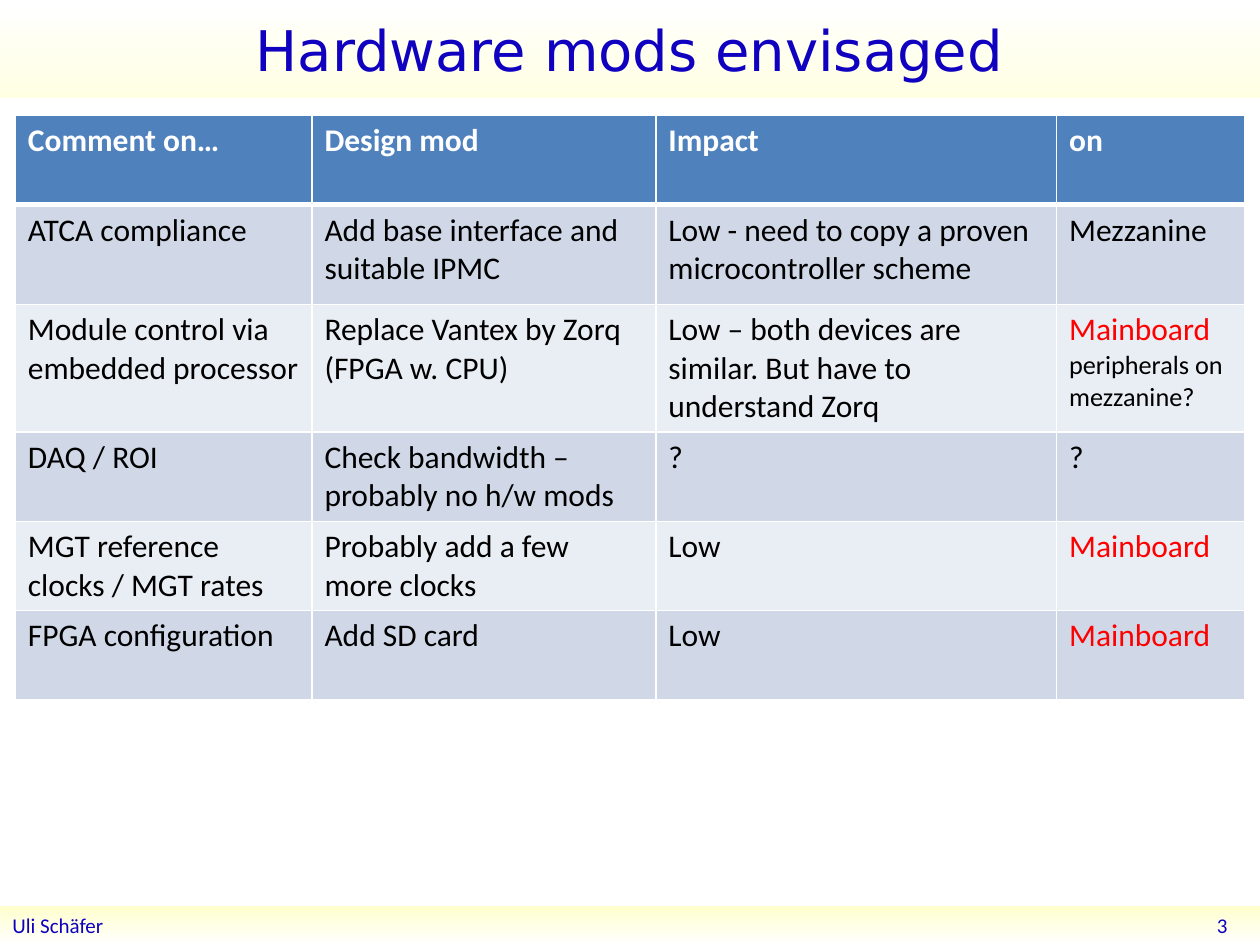
from lxml import etree
from pptx import Presentation
from pptx.dml.color import RGBColor
from pptx.enum.shapes import MSO_SHAPE
from pptx.enum.text import MSO_ANCHOR, PP_ALIGN
from pptx.oxml import parse_xml
from pptx.oxml.ns import nsdecls
from pptx.util import Pt

RECT = MSO_SHAPE.RECTANGLE
MIDDLE = MSO_ANCHOR.MIDDLE
LEFT, CENTER, RIGHT = PP_ALIGN.LEFT, PP_ALIGN.CENTER, PP_ALIGN.RIGHT

NAVY = RGBColor(0x0F, 0x01, 0xBF)
WHITE = RGBColor(0xFF, 0xFF, 0xFF)
BLACK = RGBColor(0, 0, 0)
RED = RGBColor(0xFF, 0, 0)
CREAM = RGBColor(0xFF, 0xFF, 0xE3)
LEMON = RGBColor(0xFF, 0xFF, 0xCC)
BLUE = RGBColor(0x4F, 0x81, 0xBD)
BANDS = [RGBColor(0xE9, 0xED, 0xF4), RGBColor(0xD0, 0xD8, 0xE8)]


def write(para, text, color, size=18, bold=False, name="Calibri"):
    run = para.add_run()
    run.text = text
    run.font.color.rgb = color
    form = {"size": Pt(size), "bold": bold, "name": name}
    for key, value in form.items():
        setattr(run.font, key, value)


def edge(cell, side, width):
    line = parse_xml(f'<a:{side} {nsdecls("a")} w="{Pt(width)}"/>')
    fill = etree.SubElement(line, line.tag.replace(side, "solidFill"))
    etree.SubElement(fill, line.tag.replace(side, "srgbClr"), val=str(WHITE))
    cell._tc.get_or_add_tcPr().append(line)


prs = Presentation()
prs.slide_width, prs.slide_height = Pt(720), Pt(540)
slide = prs.slides.add_slide(prs.slide_layouts[6])
shapes = slide.shapes

# Title and footer bars: top, height, start colour, angle, text format
bars = [
    (0, 56, CREAM, 90, "Hardware mods envisaged", CENTER, 32, "DejaVu Sans"),
    (517.5, 22.5, LEMON, 270, "Uli Schäfer", LEFT, 12, "Calibri"),
]
for top, high, tone, angle, text, align, size, name in bars:
    bar = shapes.add_shape(RECT, 0, Pt(top), Pt(720), Pt(high))
    bar.shadow.inherit = False
    bar.line.fill.background()
    bar.fill.gradient()
    bar.fill.gradient_angle = angle
    for stop, color in zip(bar.fill.gradient_stops, (tone, WHITE)):
        stop.color.rgb = color
    bar.text_frame.vertical_anchor = MIDDLE
    para = bar.text_frame.paragraphs[0]
    para.alignment = align
    write(para, text, NAVY, size, name=name)

# Page number
box = shapes.add_textbox(Pt(556.5), Pt(517), Pt(152), Pt(23))
box.text_frame.word_wrap = True
box.text_frame.vertical_anchor = MIDDLE
para = box.text_frame.paragraphs[0]
para.alignment = RIGHT
write(para, "3", NAVY, 12)

# Table of changes
rows = [
    ["Comment on…", "Design mod", "Impact", "on"],
    ["ATCA compliance", "Add base interface and suitable IPMC",
     "Low - need to copy a proven microcontroller scheme", "Mezzanine"],
    ["Module control via embedded processor",
     "Replace Vantex by Zorq (FPGA w. CPU)",
     "Low – both devices are similar. But have to understand Zorq",
     "Mainboard"],
    ["DAQ / ROI", "Check bandwidth – probably no h/w mods", "?", "?"],
    ["MGT reference clocks / MGT rates", "Probably add a few more clocks",
     "Low", "Mainboard"],
    ["FPGA configuration", "Add SD card", "Low", "Mainboard"],
]
wides = [169.5, 196.5, 229, 107.5]
highs = [51, 57, 73, 51, 51, 51]
table = shapes.add_table(len(rows), len(wides), Pt(8.75), Pt(66),
                         Pt(sum(wides)), Pt(sum(highs))).table
for col, wide in zip(table.columns, wides):
    col.width = Pt(wide)
for row, high in zip(table.rows, highs):
    row.height = Pt(high)

for r, row in enumerate(rows):
    head = r == 0
    for c, text in enumerate(row):
        cell = table.cell(r, c)
        for side in ("lnL", "lnR", "lnT", "lnB"):
            heavy = (head and side == "lnB") or (r == 1 and side == "lnT")
            edge(cell, side, 3 if heavy else 1)
        cell.fill.solid()
        cell.fill.fore_color.rgb = BLUE if head else BANDS[r % 2]
        color = WHITE if head else RED if text == "Mainboard" else BLACK
        write(cell.text_frame.paragraphs[0], text, color, bold=head)

# Small remark under the module control entry
para = table.cell(2, 3).text_frame.paragraphs[0]
para.add_line_break()
write(para, "peripherals on mezzanine?", BLACK, 15)

prs.save("out.pptx")
